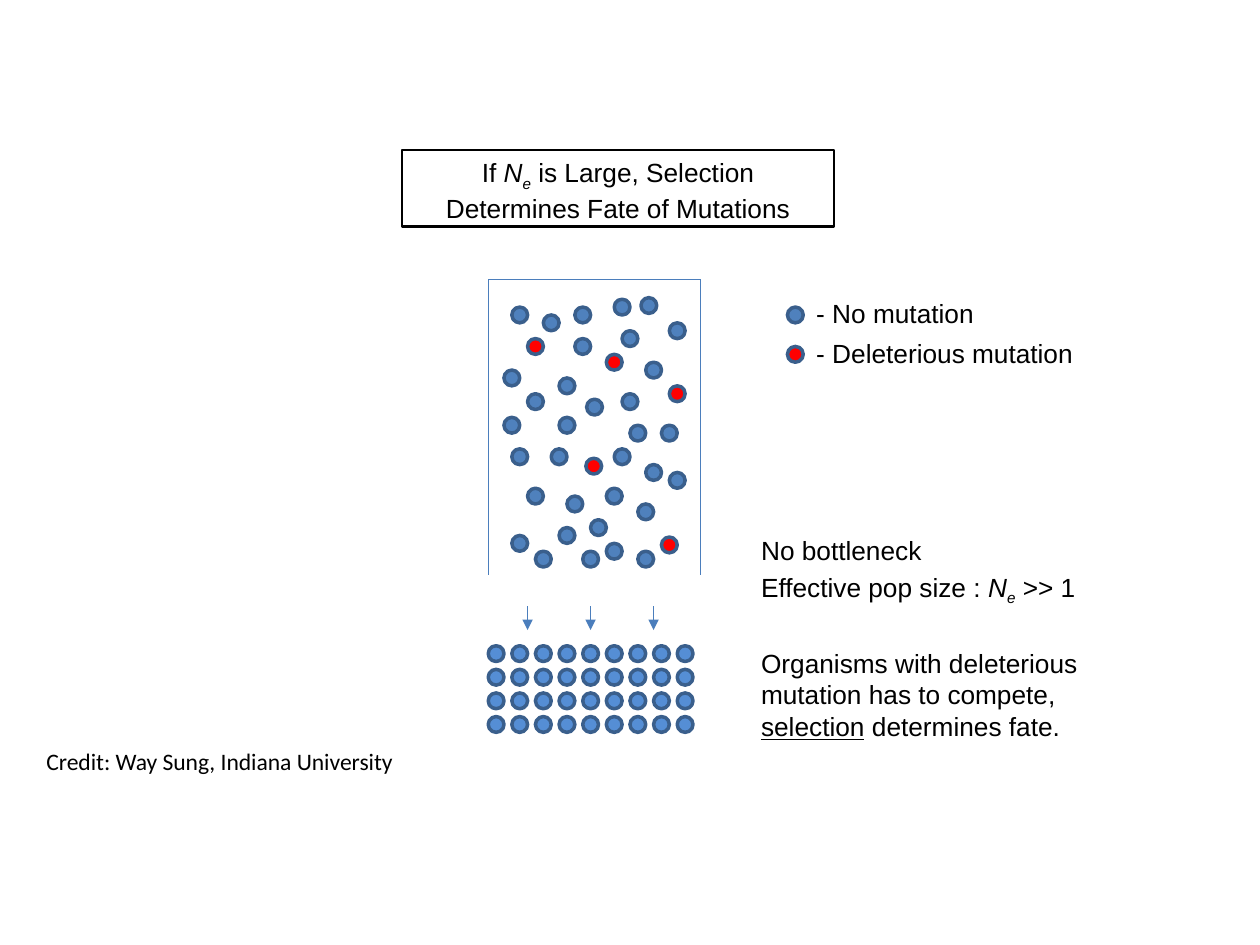
from lxml import etree
from pptx import Presentation
from pptx import util as u
from pptx.dml.color import RGBColor
from pptx.enum import shapes, text
from pptx.oxml.ns import qn

BLACK = RGBColor(0, 0, 0)
BLUE = RGBColor(0x4F, 0x81, 0xBD)
LIGHT_BLUE = RGBColor(0x55, 0x8E, 0xD5)
RED = RGBColor(0xFF, 0, 0)
DARK_BLUE = RGBColor(0x3A, 0x5F, 0x8C)
LINE_BLUE = RGBColor(0x4B, 0x7E, 0xBC)

# Runs are (text, style); styles: "" plain, "i" italic, "s" italic subscript, "u" underlined
TITLE = [("If ", ""), ("N", "i"), ("e", "s"),
         (" is Large, Selection Determines Fate of Mutations", "")]
# Body paragraphs: (space before in points, runs)
BODY = [
    (0, [("No bottleneck", "")]),
    (3, [("Effective pop size : ", ""), ("N", "i"), ("e", "s"), (" >> 1", "")]),
    (23, [("Organisms with deleterious mutation has to compete, ", ""),
          ("selection", "u"), (" determines fate.", "")]),
]
# Legend: (label, colour, dot row, label top, label width)
LEGEND = [("- No mutation", BLUE, 3, 2.31, 1.47),
          ("- Deleterious mutation", RED, 8, 2.63, 2.26)]
CREDIT = "Credit: Way Sung, Indiana University"

# Population grid: cells of 1/16 inch, counted from the container's corner
CELL, LEFT, TOP = 1 / 16, 3.875, 2.25
DOT = 2
NORMAL = [
    (3, 3), (7, 4), (11, 3), (16, 2), (19.4, 1.8), (23, 5), (17, 6), (11, 7),
    (20, 10), (2, 11), (9, 12), (5, 14), (12.5, 14.7), (17, 14), (2, 17),
    (9, 17), (18, 18), (22, 18), (3, 21), (8, 21), (16, 21), (20, 23),
    (23, 24), (5, 26), (15, 26), (10, 27), (19, 28), (13, 30), (9, 31),
    (3, 32), (15, 33), (6, 34), (12, 34), (19, 34),
]
DELETERIOUS = [(5, 7), (15, 9), (23, 13), (12.4, 22.2), (22, 32.2)]
SURVIVOR_COLS, SURVIVOR_ROWS, SURVIVOR_TOP, SURVIVOR_STEP = 9, 4, 46, 3
WALL_LEFT, WALL_RIGHT, WALL_YS = 0, 27, (-0.5, 26.2, 37)
ARROW_COLS, ARROW_YS = (5, 13, 21), (41, 44)


def at(col, row):
    return u.Inches(LEFT + col * CELL), u.Inches(TOP + row * CELL)


def dot(col, row, color):
    organism = slide.shapes.add_shape(shapes.MSO_SHAPE.OVAL, *at(col, row),
                                      u.Inches(DOT * CELL), u.Inches(DOT * CELL))
    organism.shadow.inherit = False
    organism.fill.solid()
    organism.fill.fore_color.rgb = color
    organism.line.color.rgb = DARK_BLUE
    organism.line.width = u.Pt(2)


def line(start, end, arrow=False):
    connector = slide.shapes.add_connector(shapes.MSO_CONNECTOR.STRAIGHT,
                                           *at(*start), *at(*end))
    connector.line.color.rgb = LINE_BLUE
    connector.line.width = u.Pt(0.75)
    properties = connector._element.spPr
    if arrow:
        etree.SubElement(properties.find(qn("a:ln")), qn("a:tailEnd"), type="triangle")
    etree.SubElement(properties, qn("a:effectLst"))


def add_runs(paragraph, runs, size=15, font="Arial"):
    for words, style in runs:
        run = paragraph.add_run()
        run.text = words
        run.font.size = u.Pt(size)
        run.font.name = font
        run.font.color.rgb = BLACK
        if style in ("i", "s"):
            run.font.italic = True
        if style == "s":
            run.font._element.set("baseline", "-25000")
        if style == "u":
            run.font.underline = True


def place(shape, left, top, width, height):
    shape.left, shape.top = u.Inches(left), u.Inches(top)
    shape.width, shape.height = u.Inches(width), u.Inches(height)


def label(words, left, top, width, height, **font):
    box = slide.shapes.add_textbox(*map(u.Inches, (left, top, width, height)))
    box.text_frame.word_wrap = False
    add_runs(box.text_frame.paragraphs[0], [(words, "")], **font)


deck = Presentation()
deck.slide_width, deck.slide_height = u.Inches(10), u.Inches(7.5)
slide = deck.slides.add_slide(deck.slide_layouts[1])

# Framed title
title = slide.shapes.title
place(title, 3.19, 1.19, 3.43, 0.61)
title.line.color.rgb = BLACK
title.line.width = u.Pt(1.5)
title.text_frame.auto_size = text.MSO_AUTO_SIZE.NONE
title.text_frame.vertical_anchor = text.MSO_ANCHOR.TOP
heading = title.text_frame.paragraphs[0]
heading.alignment = text.PP_ALIGN.CENTER
add_runs(heading, TITLE)

# Explanation
body = slide.placeholders[1]
place(body, 5.94, 4.19, 2.75, 0.75)
body.text_frame.auto_size = text.MSO_AUTO_SIZE.NONE
for number, (space, runs) in enumerate(BODY):
    paragraph = body.text_frame.add_paragraph() if number else body.text_frame.paragraphs[0]
    layout = paragraph._p.get_or_add_pPr()
    layout.set("marL", "0")
    layout.set("indent", "0")
    etree.SubElement(layout, qn("a:buNone"))
    paragraph.space_before = u.Pt(space)
    add_runs(paragraph, runs)

# Container, open at the bottom
line((WALL_LEFT, WALL_YS[0]), (WALL_RIGHT, WALL_YS[0]))
for wall in (WALL_LEFT, WALL_RIGHT):
    for upper, lower in zip(WALL_YS, WALL_YS[1:]):
        line((wall, upper), (wall, lower))

# Starting population
for color, cells in ((BLUE, NORMAL), (RED, DELETERIOUS)):
    for col, row in cells:
        dot(col, row, color)

# Arrows down to the survivors
for col in ARROW_COLS:
    line((col, ARROW_YS[0]), (col, ARROW_YS[1]), arrow=True)
for row in range(SURVIVOR_ROWS):
    for col in range(SURVIVOR_COLS):
        dot(col * SURVIVOR_STEP, SURVIVOR_TOP + row * SURVIVOR_STEP, LIGHT_BLUE)

# Legend and credit
for words, color, row, top, width in LEGEND:
    dot(38, row, color)
    label(words, 6.38, top, width, 0.35)
label(CREDIT, 0.27, 5.88, 3, 0.33, size=13.5, font="Calibri")

deck.save("out.pptx")
